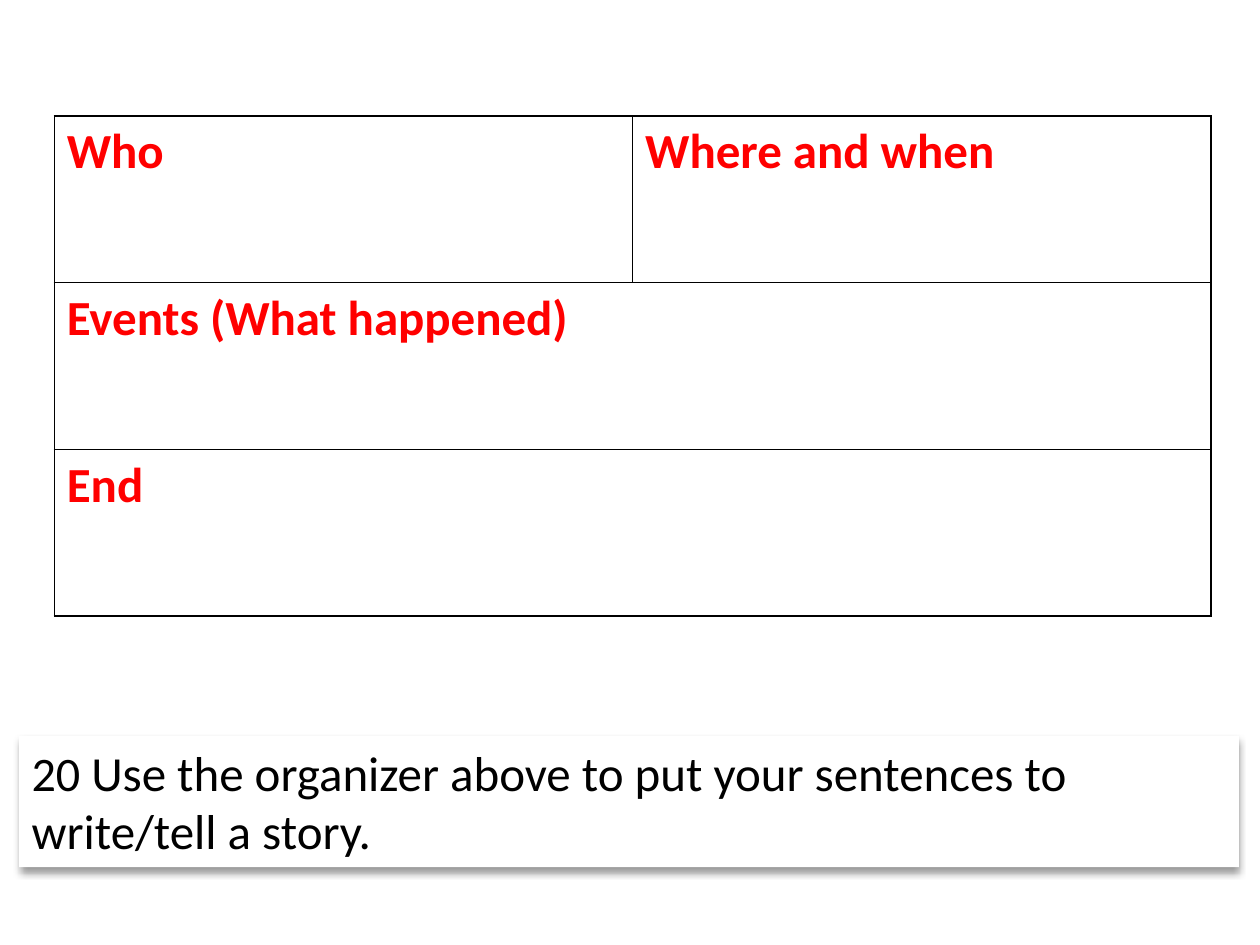
from lxml import etree
from pptx import Presentation
from pptx.dml.color import RGBColor
from pptx.enum import text
from pptx.oxml import ns
from pptx.util import Pt

ROWS = [
    ("Who", "Where and when"),
    ("Events (What happened)",),
    ("End",),
]
TASK = [
    ("20 ", 27.5),
    ("Use the organizer above to put your sentences to write/tell a story.", 28),
]
THEME = {
    "font": "Calibri",
    "size": 28,
    "label": "FF0000",
    "ink": "000000",
    "paper": "FFFFFF",
    "rule": 1,
}
GRID = {"left": 31, "top": 66.25, "col": 330.5, "row": 95.3}
NOTE = {"left": 11, "top": 420.5, "width": 697, "height": 75}


def color(name):
    return RGBColor.from_string(THEME[name])


def paint(item):
    item.fill.solid()
    item.fill.fore_color.rgb = color("paper")


def style(font, size, ink):
    font.name = THEME["font"]
    font.size = Pt(size)
    font.color.rgb = color(ink)


def add(parent, tag, **attrs):
    node = etree.SubElement(parent, ns.qn(tag))
    for key, value in attrs.items():
        node.set(key, str(value))
    return node


def tint(parent):
    fill = add(parent, "a:solidFill")
    return add(fill, "a:srgbClr", val=THEME["ink"])


def border(cell):
    """Rule all four sides; lines must come before the cell's fill."""
    props = cell._tc.get_or_add_tcPr()
    for side in ("L", "R", "T", "B"):
        tint(add(props, f"a:ln{side}", w=Pt(THEME["rule"])))


def shade(shape):
    """Drop a soft shadow straight down."""
    shape.shadow.inherit = False
    effects = shape._element.spPr.find(ns.qn("a:effectLst"))
    drop = add(effects, "a:outerShdw", blurRad=Pt(4), dist=Pt(3),
               dir=90 * 60000, rotWithShape=0)
    tone = add(drop, "a:srgbClr", val=THEME["ink"])
    add(tone, "a:alpha", val=40000)


def add_note(slide):
    box = slide.shapes.add_textbox(*(Pt(v) for v in NOTE.values()))
    paint(box)
    box.line.fill.background()
    shade(box)
    frame = box.text_frame
    frame.word_wrap = True
    frame.auto_size = text.MSO_AUTO_SIZE.SHAPE_TO_FIT_TEXT
    for words, size in TASK:
        run = frame.paragraphs[0].add_run()
        run.text = words
        style(run.font, size, "ink")


def add_grid(slide):
    count = max(len(row) for row in ROWS)
    frame = slide.shapes.add_table(
        len(ROWS), count, Pt(GRID["left"]), Pt(GRID["top"]),
        Pt(GRID["col"] * count), Pt(GRID["row"] * len(ROWS)))
    table = frame.table
    table.first_row = table.horz_banding = False
    for r, labels in enumerate(ROWS):
        table.rows[r].height = Pt(GRID["row"])
        if len(labels) < count:
            table.cell(r, 0).merge(table.cell(r, count - 1))
        for c in range(count):
            cell = table.cell(r, c)
            border(cell)
            paint(cell)
            if c < len(labels):
                cell.text = labels[c]
                font = cell.text_frame.paragraphs[0].font
                style(font, THEME["size"], "label")
                font.bold = True


def main():
    deck = Presentation()
    deck.slide_width, deck.slide_height = Pt(720), Pt(540)
    slide = deck.slides.add_slide(deck.slide_layouts[6])
    add_note(slide)
    add_grid(slide)
    deck.save("out.pptx")


if __name__ == "__main__":
    main()
